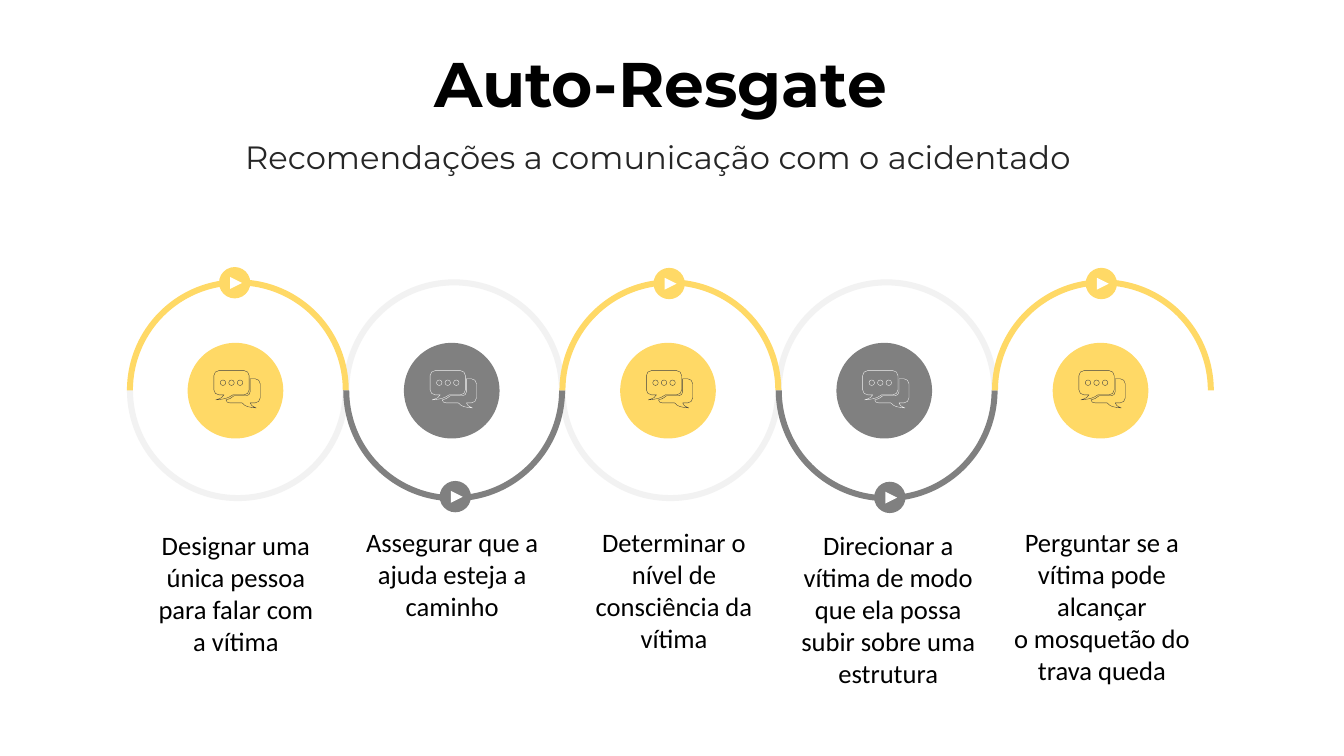
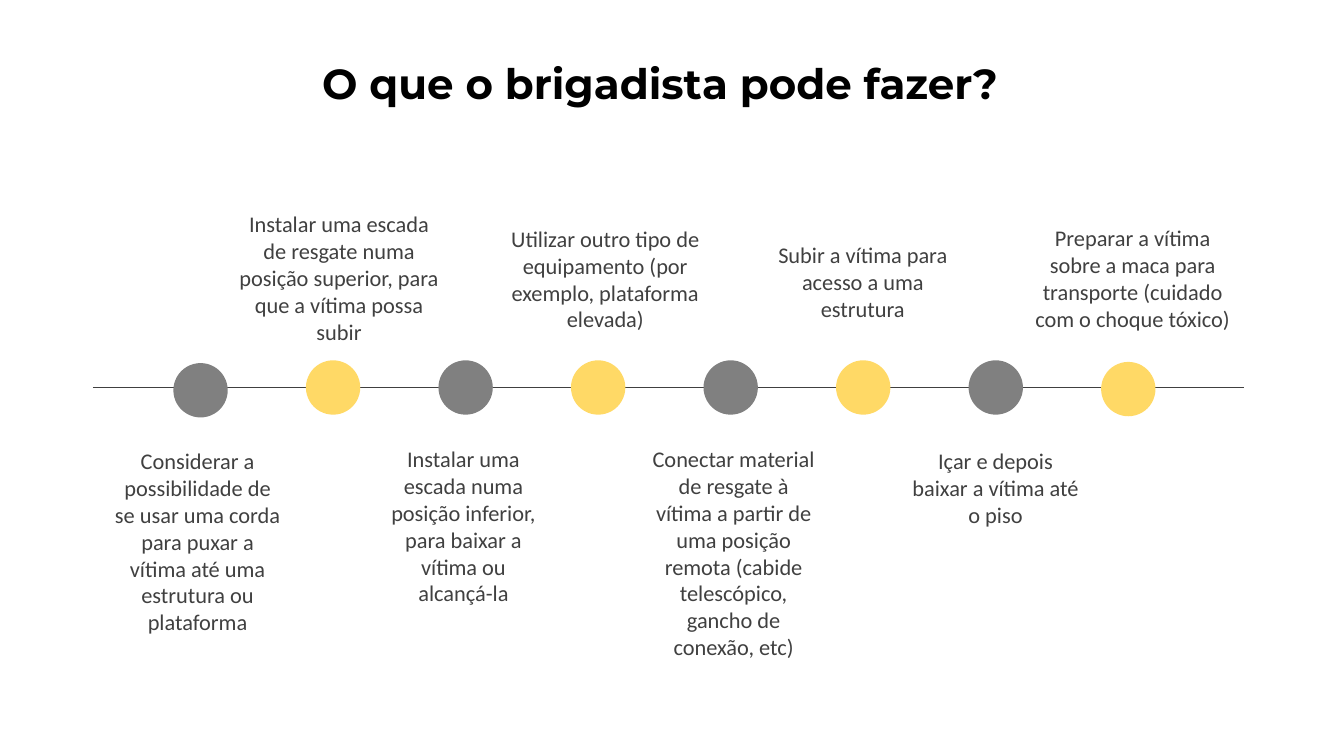
from math import cos, radians, sin, tan

from lxml import etree
from pptx import Presentation
from pptx.dml.color import RGBColor
from pptx.enum.shapes import MSO_CONNECTOR, MSO_SHAPE
from pptx.enum.text import MSO_ANCHOR, MSO_AUTO_SIZE, PP_ALIGN
from pptx.oxml.ns import qn
from pptx.util import Cm, Pt

OVAL, ARC = MSO_SHAPE.OVAL, MSO_SHAPE.BLOCK_ARC
PLAY = MSO_SHAPE.FLOWCHART_EXTRACT
STRAIGHT = MSO_CONNECTOR.STRAIGHT
CENTER, TOP, NO_FIT = PP_ALIGN.CENTER, MSO_ANCHOR.TOP, MSO_AUTO_SIZE.NONE

GOLD = RGBColor(0xFF, 0xD9, 0x66)
GRAY = RGBColor(0x80, 0x80, 0x80)
PALE = RGBColor(0xF2, 0xF2, 0xF2)
DARK = RGBColor(0x40, 0x40, 0x40)
INK = RGBColor(0x26, 0x26, 0x26)
BLACK = RGBColor(0, 0, 0)
WHITE = RGBColor(0xFF, 0xFF, 0xFF)
HEAD, BODY = "Montserrat", "Calibri"

RESCUE = "Auto-Resgate"
ADVICE = "Recomendações a comunicação com o acidentado"
# text, text box (left, top, width), knob (left, top), all in cm
TIPS = [
    ("Designar uma única pessoa para falar com a vítima",
     (3.66, 13.21, 4.57), (5.52, 6.73)),
    ("Assegurar que a ajuda esteja a caminho",
     (8.74, 13.13, 5.31), (11.08, 12.12)),
    ("Determinar o nível de consciência da vítima",
     (14.43, 13.13, 5.11), (16.47, 6.75)),
    ("Direcionar a vítima de modo que ela possa subir sobre uma estrutura",
     (19.63, 13.2, 5.51), (22.03, 12.14)),
    ("Perguntar se a vítima pode alcançar\no mosquetão do trava queda",
     (24.94, 13.13, 5.66), (27.36, 6.75)),
]

QUERY = "O que o brigadista pode fazer?"
# text, left and top in cm; steps alternate below and above the line
STEPS = [
    ("Considerar a possibilidade de se usar uma corda para puxar a vítima "
     "até uma estrutura ou plataforma", 2.63, 11.14),
    ("Instalar uma escada de resgate numa posição superior, para que a "
     "vítima possa subir", 5.74, 5.17),
    ("Instalar uma escada numa posição inferior, para baixar a vítima ou\n"
     "alcançá-la", 9.33, 11.09),
    ("Utilizar outro tipo de equipamento (por exemplo, plataforma elevada)",
     12.45, 5.54),
    ("Conectar material de resgate à vítima a partir de uma posição remota "
     "(cabide telescópico, gancho de conexão, etc)", 16.14, 11.09),
    ("Subir a vítima para acesso a uma estrutura", 18.94, 5.95),
    ("Içar e depois baixar a vítima até o piso", 22.74, 11.14),
    ("Preparar a vítima sobre a maca para transporte (cuidado com o choque "
     "tóxico)", 25.74, 5.53),
]
DROPS = {0: 0.07, 7: 0.04}  # end dots that sit a little lower


def write(frame, text, size, color, font=BODY, bold=False, inset=(0.25, 0.13)):
    frame.text = text
    frame.word_wrap, frame.auto_size = True, NO_FIT
    frame.vertical_anchor = TOP
    frame.margin_left = frame.margin_right = Cm(inset[0])
    frame.margin_top = frame.margin_bottom = Cm(inset[1])
    for para in frame.paragraphs:
        para.alignment = CENTER
        para.space_before = Pt(0)
        para.font.size, para.font.name = Pt(size), font
        para.font.bold, para.font.color.rgb = bold, color


def place(shape, left, top, width, height):
    shape.left, shape.top = Cm(left), Cm(top)
    shape.width, shape.height = Cm(width), Cm(height)


def label(slide, text, left, top, width, size, color):
    box = slide.shapes.add_textbox(Cm(left), Cm(top), Cm(width), Cm(1.37))
    write(box.text_frame, text, size, color)


def solid(shapes, kind, left, top, size, color, turn=0):
    """Add a square, borderless preset shape."""
    shape = shapes.add_shape(kind, Cm(left), Cm(top), Cm(size), Cm(size))
    shape.shadow.inherit = False
    shape.fill.solid()
    shape.fill.fore_color.rgb = color
    shape.line.fill.background()
    shape.rotation = turn
    return shape


def knob(slide, left, top, color):
    shapes = slide.shapes.add_group_shape().shapes
    solid(shapes, OVAL, left, top, 0.79, color)
    solid(shapes, PLAY, left + 0.28, top + 0.25, 0.3, WHITE, 90)


def sweep(x, y, radius, *angles):
    """Start point, then one cubic curve between each two angles."""
    def at(angle, slope=0):
        c, s = cos(radians(angle)), sin(radians(angle))
        return x + radius * (c - slope * s), y + radius * (s + slope * c)

    steps = [(at(angles[0]),)]
    for a, b in zip(angles, angles[1:]):
        pull = 4 / 3 * tan(radians(b - a) / 4)
        steps.append((at(a, pull), at(b, -pull), at(b)))
    return steps


def trace(slide, left, top, outlines):
    """Draw closed outlines, in thousandths of a centimetre.

    A step of one point is a line, a step of three is a cubic curve.
    """
    pen = slide.shapes.build_freeform(*outlines[0][0][0], scale=Cm(0.001))
    for i, steps in enumerate(outlines):
        if i:
            pen.move_to(*steps[0][0])
        pen.add_line_segments([p for s in steps[1:] for p in s], close=True)
    shape = pen.convert_to_shape(Cm(left), Cm(top))
    shape.shadow.inherit = False
    lines = shape._element.iter(qn("a:lnTo"))
    lines = iter(list(lines))
    for step in (s for steps in outlines for s in steps[1:]):
        first, *rest = [next(lines) for _ in step]
        if rest:
            first.addprevious(etree.Element(qn("a:cubicBezTo")))
            bend = first.getprevious()
            for line in [first] + rest:
                bend.append(line[0])
                line.getparent().remove(line)
    return shape


def wave(slide, count):
    """Draw the pale band that runs behind the coloured half rings."""
    outer, inner, mid = 2794, 2642, 2794
    there, back = [], []
    for i in range(count):
        x = mid + 5450 * i
        side, ahead, home = ((270, inner, outer) if i % 2
                             else (90, outer, inner))
        end = 360 if i % 2 else 0
        there += sweep(x, mid, ahead, 180, side, end)
        back = sweep(x, mid, home, end, side, 180) + back
    band = trace(slide, 3.2, 7.04, [there + back])
    band.fill.solid()
    band.fill.fore_color.rgb = PALE
    band.line.fill.background()


def chat(slide, left, top, color):
    front = (sweep(127, 127, 127, 180, 270) + sweep(763, 127, 127, 270, 360)
             + sweep(763, 483, 127, 0, 90)
             + [((480, 610),), ((330, 711), (280, 711), (50, 737)),
                ((203, 686), (203, 686), (254, 610))]
             + sweep(127, 483, 127, 90, 180))
    back = ([((915, 205),)] + sweep(1041, 332, 127, 270, 360)
            + sweep(1041, 686, 127, 0, 90)
            + [((915, 813),), ((940, 864), (940, 889), (1067, 940)),
               ((838, 914), (813, 914), (711, 813)), ((406, 813),),
               ((356, 813), (305, 787), (305, 737)),
               ((381, 737), (432, 686), (508, 635))]
            + sweep(813, 533, 102, 90, 0))
    dots = [sweep(x, 305, 70, 0, 90, 180, 270, 360) for x in (660, 445, 230)]
    icon = trace(slide, left, top, dots + [back, front])
    icon.fill.background()
    icon.line.color.rgb = color
    icon.line.width = Pt(0.25)


def rescue(deck):
    slide = deck.slides.add_slide(deck.slide_layouts[0])
    title, sub = slide.placeholders
    place(title, 4.85, 1.12, 23.6, 1.93)
    write(title.text_frame, RESCUE, 45, BLACK, HEAD, True, (0, 0))
    place(sub, 4.53, 3.33, 24.13, 1.12)
    write(sub.text_frame, ADVICE, 23, INK, HEAD)

    wave(slide, len(TIPS) - 1)
    for i, (text, spot, grip) in enumerate(TIPS):
        left = 3.2 + 5.45 * i
        color, edge, turn = (GRAY, PALE, 180) if i % 2 else (GOLD, DARK, 0)
        label(slide, text, *spot, 19, BLACK)
        solid(slide.shapes, OVAL, left + 1.53, 8.64, 2.41, color)
        ring = solid(slide.shapes, ARC, left, 7.04, 5.59, color, turn)
        ring.adjustments[2] = 0.027
        knob(slide, *grip, color)
        chat(slide, left + 2.19, 9.34, edge)


def actions(deck):
    slide = deck.slides.add_slide(deck.slide_layouts[5])
    title = slide.shapes.title
    place(title, 6.73, 1.32, 19.81, 1.12)
    write(title.text_frame, QUERY, 30, BLACK, HEAD, True)

    axis = slide.shapes.add_connector(
        STRAIGHT, Cm(2.34), Cm(9.76), Cm(31.34), Cm(9.76))
    axis.line.color.rgb = DARK
    axis.line.width = Pt(0.75)
    etree.SubElement(axis._element.spPr, qn("a:effectLst"))
    for i, (text, left, top) in enumerate(STEPS):
        color, width = (GOLD, 5.61) if i % 2 else (GRAY, 4.7)
        drop = DROPS.get(i, 0)
        solid(slide.shapes, OVAL, 4.37 + 3.34 * i, 9.08 + drop, 1.37, color)
        label(slide, text, left, top, width, 16, DARK)


def main():
    deck = Presentation()
    deck.slide_width, deck.slide_height = Cm(33.87), Cm(19.05)
    rescue(deck)
    actions(deck)
    deck.save("out.pptx")


if __name__ == "__main__":
    main()
